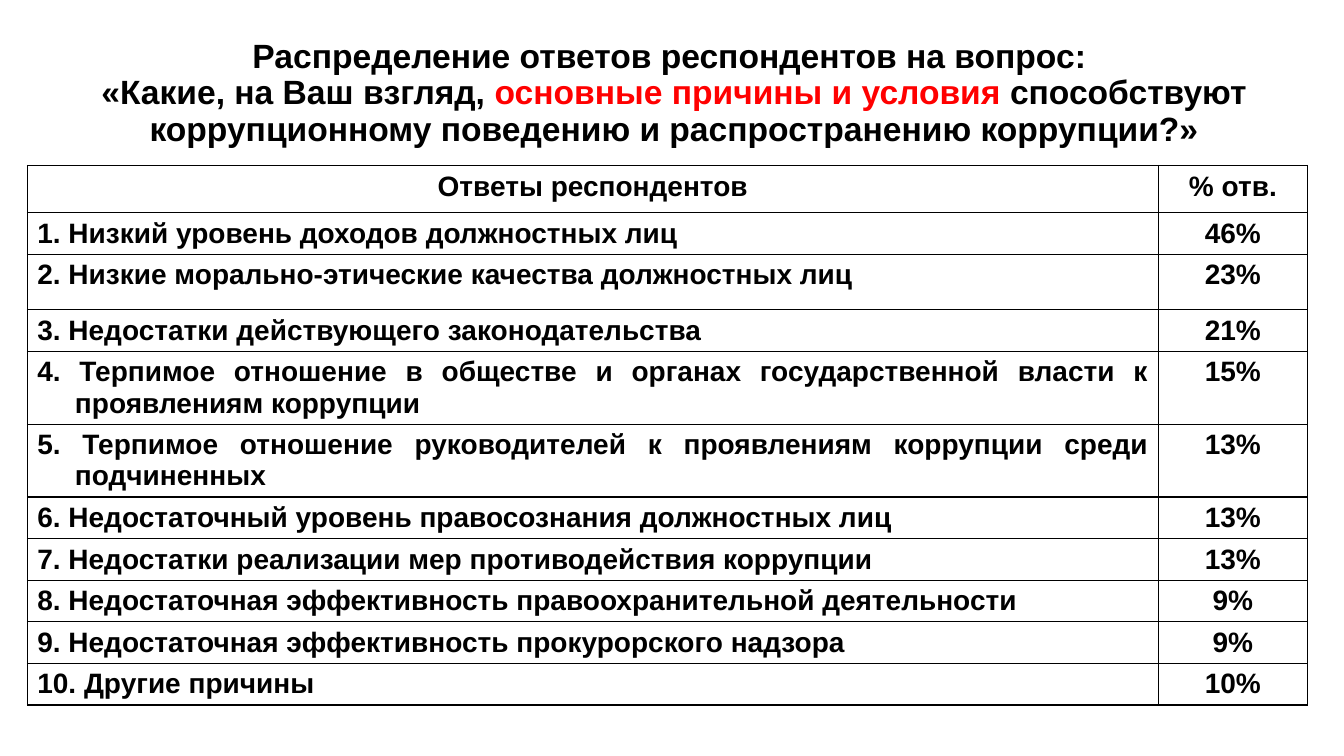
import pptx
import pptx.dml.color
import pptx.enum.text
import pptx.oxml
import pptx.oxml.ns
import pptx.util
from pptx.util import Cm

ALIGN = pptx.enum.text.PP_ALIGN
HEADER = ("Ответы респондентов", "% отв.")
ANSWERS = [
    ("Низкий уровень доходов должностных лиц", 46),
    ("Низкие морально-этические качества должностных лиц", 23),
    ("Недостатки действующего законодательства", 21),
    ("Терпимое отношение в обществе и органах государственной власти "
     "к проявлениям коррупции", 15),
    ("Терпимое отношение руководителей к проявлениям коррупции "
     "среди подчиненных", 13),
    ("Недостаточный уровень правосознания должностных лиц", 13),
    ("Недостатки реализации мер противодействия коррупции", 13),
    ("Недостаточная эффективность правоохранительной деятельности", 9),
    ("Недостаточная эффективность прокурорского надзора", 9),
    ("Другие причины", 10),
]
COLUMN_WIDTHS = (28.5, 3.76)
ROW_HEIGHTS = (1.19, 0.99, 1.4, 0.97, 1.7, 1.7, 0.97, 0.97, 0.99, 0.97, 0.97)


def rgb(value):
    return pptx.dml.color.RGBColor.from_string(value)


class SlideBuilder:
    font_name = "Arial"
    ink = "000000"
    accent = "FF0000"
    title_size = 24
    table_size = 20
    hanging = Cm(0.95)

    def __init__(self, s):
        self.s = s

    def style_run(self, r, size, color):
        r.font.name = self.font_name
        r.font.size = pptx.util.Pt(size)
        r.font.bold = True
        r.font.color.rgb = rgb(color)

    def title(self, lines, left, top, width, height):
        """Fill the title; each line is a list of (text, color) pieces."""
        sp = self.s.shapes.title
        sp.left, sp.top, sp.width, sp.height = map(Cm, (left, top, width, height))
        tf = sp.text_frame
        tf.word_wrap = True
        tf.auto_size = pptx.enum.text.MSO_AUTO_SIZE.NONE
        tf.vertical_anchor = pptx.enum.text.MSO_ANCHOR.MIDDLE
        p = tf.paragraphs[0]
        p.alignment = ALIGN.CENTER
        p.line_spacing = 0.9
        for i, pieces in enumerate(lines):
            if i:
                p.add_line_break()
            for text, color in pieces:
                r = p.add_run()
                r.text = text
                self.style_run(r, self.title_size, color)

    def borders(self, cell):
        tcPr = cell._tc.get_or_add_tcPr()
        for side in ("lnL", "lnR", "lnT", "lnB"):
            tcPr.append(pptx.oxml.parse_xml(
                f'<a:{side} {pptx.oxml.ns.nsdecls("a")} w="{pptx.util.Pt(1)}">'
                f'<a:solidFill><a:srgbClr val="{self.ink}"/></a:solidFill>'
                f'</a:{side}>'))

    def cell(self, cell, text, alignment):
        self.borders(cell)
        cell.fill.background()
        cell.margin_left = cell.margin_right = Cm(0.25)
        cell.margin_top = cell.margin_bottom = Cm(0.13)
        p = cell.text_frame.paragraphs[0]
        p.text = text
        p.alignment = alignment
        pPr = p._p.get_or_add_pPr()
        pPr.set("marL", str(self.hanging))
        pPr.set("indent", str(-self.hanging))
        self.style_run(p.runs[0], self.table_size, self.ink)

    def table(self, rows, left, top, widths, heights):
        """Draw a bordered table with a centred header and last column."""
        table = self.s.shapes.add_table(
            len(rows), len(widths), Cm(left), Cm(top),
            Cm(sum(widths)), Cm(sum(heights))).table
        table.first_row = table.horz_banding = False
        for column, width in zip(table.columns, widths):
            column.width = Cm(width)
        for i, (row, height) in enumerate(zip(rows, heights)):
            table.rows[i].height = Cm(height)
            for j, text in enumerate(row):
                left_aligned = i > 0 and j == 0
                self.cell(table.cell(i, j), text,
                          ALIGN.JUSTIFY if left_aligned else ALIGN.CENTER)


def main():
    prs = pptx.Presentation()
    prs.slide_width, prs.slide_height = Cm(33.87), Cm(19.05)
    builder = SlideBuilder(prs.slides.add_slide(prs.slide_layouts[5]))
    builder.title([
        [("Распределение ответов респондентов на вопрос: ", builder.ink)],
        [("«Какие, на Ваш взгляд, ", builder.ink),
         ("основные причины и условия ", builder.accent),
         ("способствуют коррупционному поведению и распространению "
          "коррупции?»", builder.ink)],
    ], 0.69, 0.56, 32.59, 3.61)
    rows = [HEADER] + [(f"{n}. {answer}", f"{share}%")
                       for n, (answer, share) in enumerate(ANSWERS, 1)]
    builder.table(rows, 0.69, 4.17, COLUMN_WIDTHS, ROW_HEIGHTS)
    prs.save("out.pptx")


if __name__ == "__main__":
    main()
